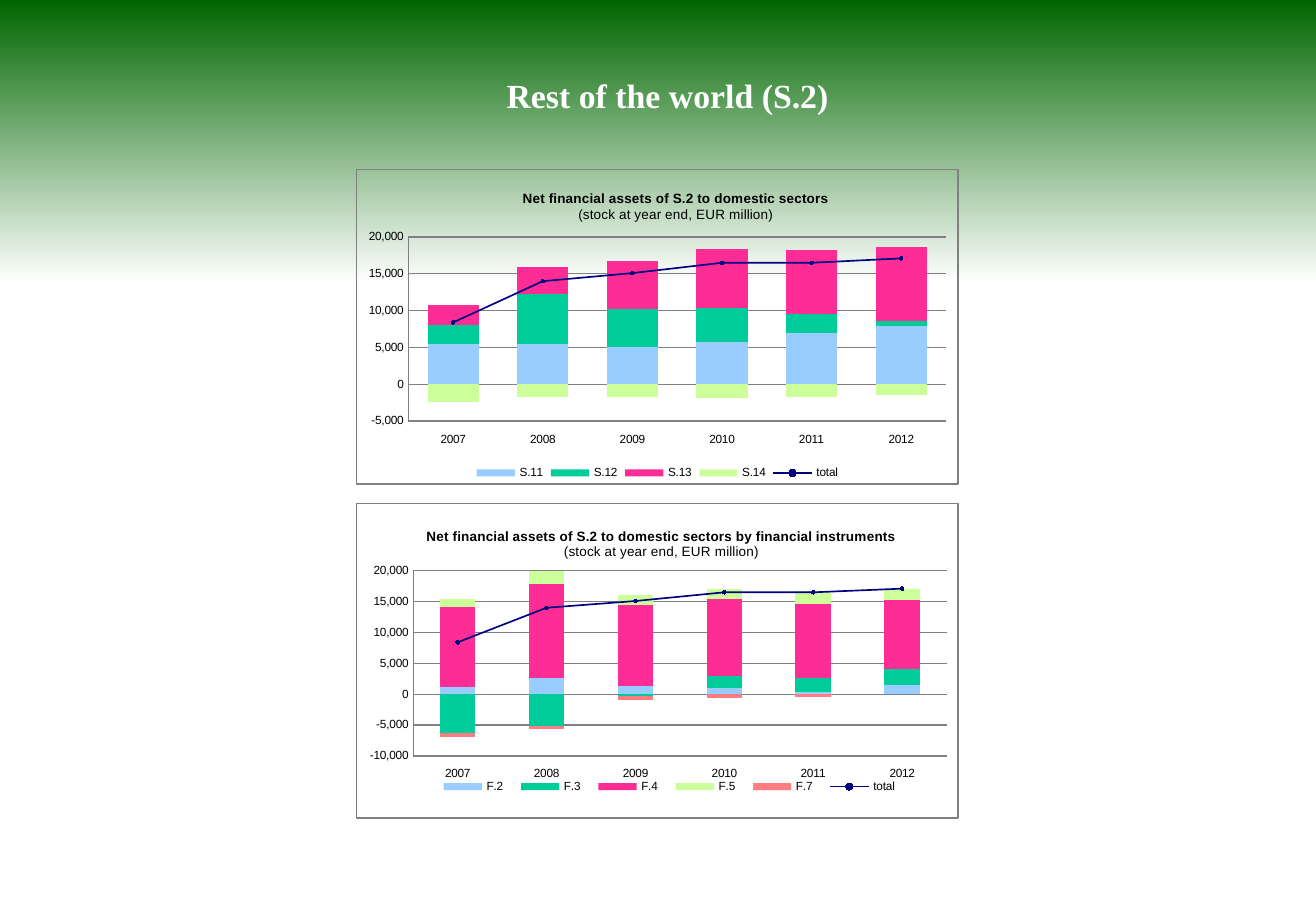
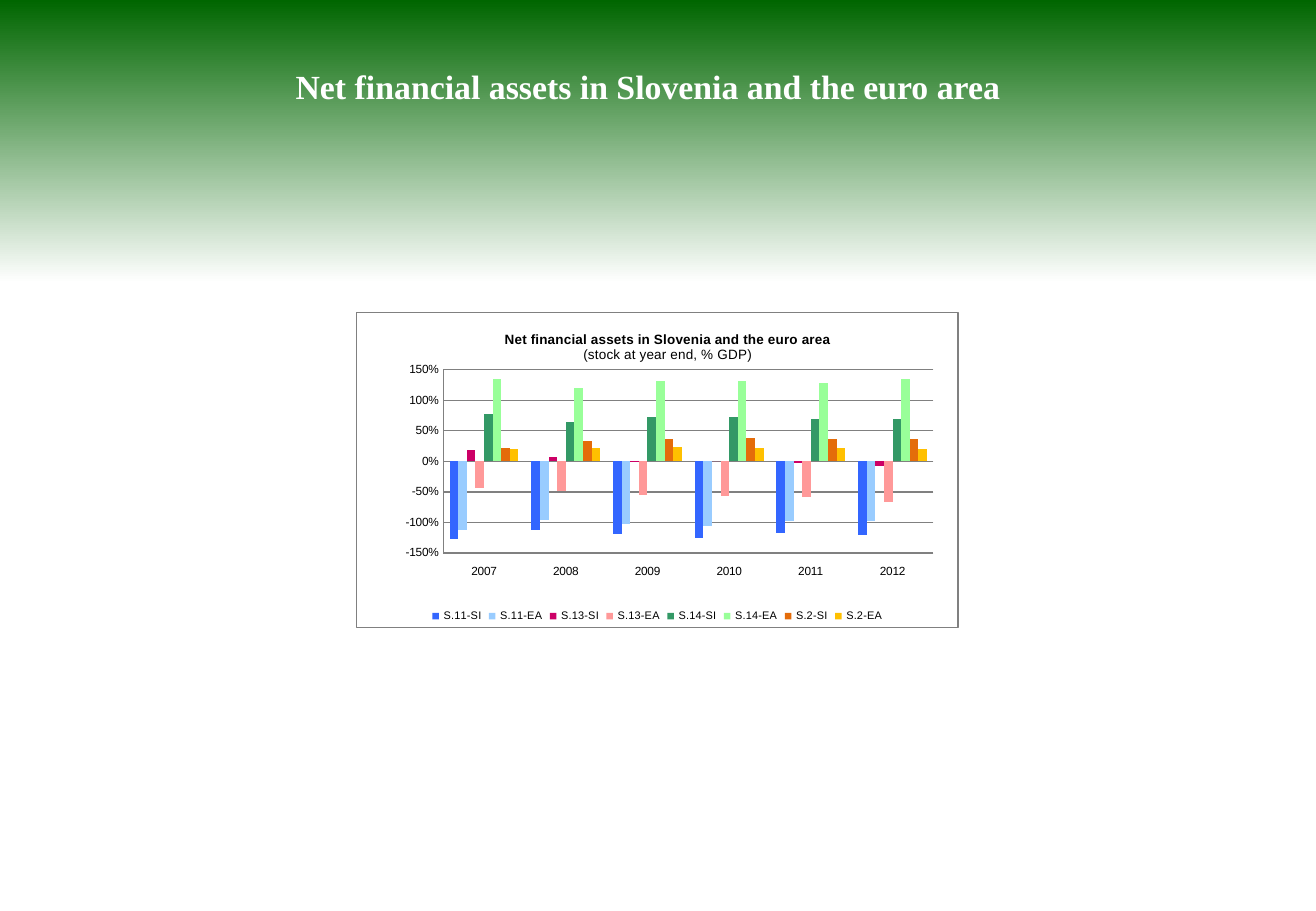
from pptx import Presentation
from pptx.chart.data import CategoryChartData as Data
from pptx.dml.color import RGBColor
from pptx.enum.chart import XL_CHART_TYPE as Kind, XL_LEGEND_POSITION as Pos
from pptx.enum.chart import XL_MARKER_STYLE as Mark, XL_TICK_LABEL_POSITION as Tick
from pptx.enum.chart import XL_TICK_MARK as Notch
from pptx.enum.shapes import MSO_SHAPE as Shape
from pptx.enum.text import MSO_ANCHOR as Anchor, PP_ALIGN as Align
from pptx.oxml import parse_xml
from pptx.oxml.ns import nsdecls, qn
from pptx.util import Inches, Pt

WIDE, HIGH = 10.83, 7.5
GREEN, WHITE, BLACK, GRAY, NAVY = "006600", "FFFFFF", "000000", "808080", "000080"
SERIF, SANS = "Times New Roman", "Arial"
YEARS = ["2007", "2008", "2009", "2010", "2011", "2012"]
STACK = ["99CCFF", "00CC99", "FE2D95", "CCFF99", "FF7C80"]
PAIRS = ["3366FF", "99CCFF", "CC0066", "FF9999", "339966", "99FF99", "E46C0A", "FFC000"]
TOTAL = [8400, 14000, 15100, 16500, 16500, 17100]
SECTORS = {
    "S.11": [5400, 5500, 5100, 5800, 6900, 7900],
    "S.12": [2600, 6700, 5100, 4500, 2700, 700],
    "S.13": [2800, 3700, 6600, 8100, 8600, 10100],
    "S.14": [-2400, -1800, -1800, -1900, -1800, -1500],
    "total": TOTAL,
}
TOOLS = {
    "F.2": [1100, 2600, 1400, 1000, 300, 1500],
    "F.3": [-6300, -5200, -300, 2000, 2400, 2600],
    "F.4": [13100, 15200, 13100, 12400, 11900, 11100],
    "F.5": [1200, 2100, 1500, 1700, 2100, 1800],
    "F.7": [-600, -500, -600, -600, -400, 0],
    "total": TOTAL,
}
SHARES = {
    "S.11-SI": [-1.27, -1.12, -1.19, -1.25, -1.18, -1.2],
    "S.11-EA": [-1.12, -0.96, -1.03, -1.05, -0.97, -0.98],
    "S.13-SI": [0.19, 0.07, 0.01, 0, -0.02, -0.08],
    "S.13-EA": [-0.43, -0.48, -0.55, -0.57, -0.59, -0.66],
    "S.14-SI": [0.78, 0.64, 0.72, 0.73, 0.69, 0.7],
    "S.14-EA": [1.35, 1.2, 1.32, 1.32, 1.28, 1.35],
    "S.2-SI": [0.22, 0.34, 0.37, 0.38, 0.37, 0.37],
    "S.2-EA": [0.2, 0.21, 0.23, 0.21, 0.21, 0.2],
}


def tint(code):
    """Turn a hex string into a colour."""
    return RGBColor.from_string(code)


def style(font, size, name=SANS, color=BLACK, bold=False):
    """Set the look of a font."""
    font.size, font.name, font.bold = Pt(size), name, bold
    font.color.rgb = tint(color)


def add_band(prs, slide):
    """Draw the green band and hand it to the master."""
    band = slide.shapes.add_shape(Shape.RECTANGLE, 0, 0, Inches(WIDE), Inches(2.33))
    band.shadow.inherit = False
    band.line.fill.background()
    band.fill.gradient()
    band.fill.gradient_angle = 270
    for stop, code, at in zip(band.fill.gradient_stops, (GREEN, WHITE), (0, 1)):
        stop.color.rgb, stop.position = tint(code), at
    prs.slide_master.shapes.element.insert(2, band.element)


def add_title(slide, text, left, top, pad=0.1):
    """Place and format the slide title."""
    title = slide.shapes.title
    title.left, title.top = Inches(left), Inches(top)
    title.width, title.height = Inches(9.21), Inches(0.63)
    frame = title.text_frame
    frame.text = text
    frame.word_wrap = True
    frame.margin_left, frame.vertical_anchor = Inches(pad), Anchor.MIDDLE
    line = frame.paragraphs[0]
    line.alignment = Align.CENTER
    style(line.runs[0].font, 20, SERIF, WHITE, True)


def place(node, box, inner=False):
    """Give a chart part a fixed place in fractions of the chart."""
    for old in node.findall(qn("c:layout")):
        node.remove(old)
    modes = '<c:layoutTarget val="inner"/>' if inner else ""
    modes += '<c:xMode val="edge"/><c:yMode val="edge"/>'
    sizes = "".join(f'<c:{key} val="{val}"/>' for key, val in zip("xywh", box))
    layout = parse_xml(f'<c:layout {nsdecls("c")}><c:manualLayout>{modes}{sizes}'
                       '</c:manualLayout></c:layout>')
    over = node.find(qn("c:overlay"))
    if inner:
        node.insert(0, layout)
    elif over is None:
        node.append(layout)
    else:
        over.addprevious(layout)


def add_frame(chart):
    """Clear the chart ground and draw its border."""
    clear = f'<c:spPr {nsdecls("c", "a")}><a:noFill/>%s</c:spPr>'
    edge = f'<a:ln w="9525"><a:solidFill><a:srgbClr val="{GRAY}"/></a:solidFill></a:ln>'
    root = chart.element
    root.find(qn("c:chart")).addnext(parse_xml(clear % edge))
    root.xpath(".//c:plotArea")[0].append(parse_xml(clear % ""))


def split_total(chart):
    """Move the last series from the columns to a line."""
    bars = chart.element.xpath(".//c:barChart")[0]
    ser = bars.findall(qn("c:ser"))[-1]
    for flag in ser.findall(qn("c:invertIfNegative")):
        ser.remove(flag)
    axes = "".join(f'<c:axId val="{ax.get("val")}"/>' for ax in bars.findall(qn("c:axId")))
    line = parse_xml(f'<c:lineChart {nsdecls("c")}><c:grouping val="stacked"/>'
                     f'<c:varyColors val="0"/><c:marker val="1"/>{axes}</c:lineChart>')
    line.insert(2, ser)
    bars.addnext(line)
    total = chart.plots[1].series[0]
    total.smooth = False
    total.format.line.width = Pt(1)
    total.format.line.color.rgb = tint(NAVY)
    total.marker.style, total.marker.size = Mark.CIRCLE, 2
    total.marker.format.fill.solid()
    total.marker.format.fill.fore_color.rgb = tint(NAVY)
    total.marker.format.line.color.rgb = tint(NAVY)


def set_axes(chart, low, high, step, form):
    """Format both axes and the grid."""
    cat, val = chart.category_axis, chart.value_axis
    for axis in (cat, val):
        axis.major_tick_mark = axis.minor_tick_mark = Notch.NONE
        axis.format.line.color.rgb = tint(GRAY)
        style(axis.tick_labels.font, 7)
    cat.tick_label_position = Tick.LOW
    val.minimum_scale, val.maximum_scale, val.major_unit = low, high, step
    val.tick_labels.number_format = form
    val.tick_labels.number_format_is_linked = False
    val.has_major_gridlines = True
    val.major_gridlines.format.line.color.rgb = tint(GRAY)


def add_head(chart, name, unit, spot):
    """Write the two lines of the chart title."""
    chart.has_title = True
    frame = chart.chart_title.text_frame
    frame.text = f"{name}\n{unit}"
    for line, bold in zip(frame.paragraphs, (True, False)):
        line.alignment = Align.CENTER
        style(line.runs[0].font, 8, bold=bold)
    place(chart.element.xpath("./c:chart/c:title")[0], spot)


def add_panel(slide, top, name, unit, spot, rows, colors, scale, plot,
              gap=150, stacked=True, size=7, key=None):
    """Place one framed chart at the given height."""
    form = scale[3]
    data = Data(number_format=form)
    data.categories = YEARS
    for label, vals in rows.items():
        data.add_series(label, vals)
    kind = Kind.COLUMN_STACKED if stacked else Kind.COLUMN_CLUSTERED
    chart = slide.shapes.add_chart(kind, Inches(2.93), Inches(top), Inches(4.96),
                                   Inches(2.6), data).chart
    style(chart.font, 10, SERIF)
    add_head(chart, name, unit, spot)
    set_axes(chart, *scale)
    if stacked:
        split_total(chart)
    bars = chart.plots[0]
    bars.vary_by_categories = False
    bars.gap_width, bars.overlap = gap, 100 if stacked else 0
    for ser, code in zip(bars.series, colors):
        ser.invert_if_negative = False
        ser.format.fill.solid()
        ser.format.fill.fore_color.rgb = tint(code)
        ser.format.line.fill.background()
    chart.has_legend = True
    chart.legend.position = Pos.BOTTOM
    chart.legend.include_in_layout = False
    style(chart.legend.font, size)
    if key:
        place(chart.element.xpath(".//c:legend")[0], key)
    place(chart.element.xpath(".//c:plotArea")[0], plot, True)
    add_frame(chart)


def add_world(slide):
    """Fill the slide on the rest of the world."""
    add_title(slide, "Rest of the world (S.2)", 0.68, 0.47, 0.52)
    name, unit = "Net financial assets of S.2 to domestic sectors", "(stock at year end, EUR million)"
    add_panel(slide, 1.39, name, unit, (0.27, 0.05), SECTORS, STACK,
              (-5000, 20000, 5000, "#,##0"), (0.086, 0.215, 0.894, 0.585), gap=75)
    add_panel(slide, 4.14, f"{name} by financial instruments", unit, (0.11, 0.06), TOOLS, STACK,
              (-10000, 20000, 5000, "#,##0"), (0.094, 0.214, 0.887, 0.589),
              key=(0.12, 0.87, 0.8, 0.06))


def add_area(slide):
    """Fill the slide on the euro area."""
    name = "Net financial assets in Slovenia and the euro area"
    add_title(slide, name, 0.73, 0.39)
    add_panel(slide, 2.57, name, "(stock at year end, % GDP)", (0.24, 0.04), SHARES, PAIRS,
              (-1.5, 1.5, 0.5, "0%"), (0.144, 0.181, 0.815, 0.583), stacked=False, size=6.5)


def main():
    """Build and save the deck."""
    prs = Presentation()
    prs.slide_width, prs.slide_height = Inches(WIDE), Inches(HIGH)
    world, area = [prs.slides.add_slide(prs.slide_layouts[5]) for _ in range(2)]
    add_band(prs, world)
    add_world(world)
    add_area(area)
    prs.save("out.pptx")


if __name__ == "__main__":
    main()
